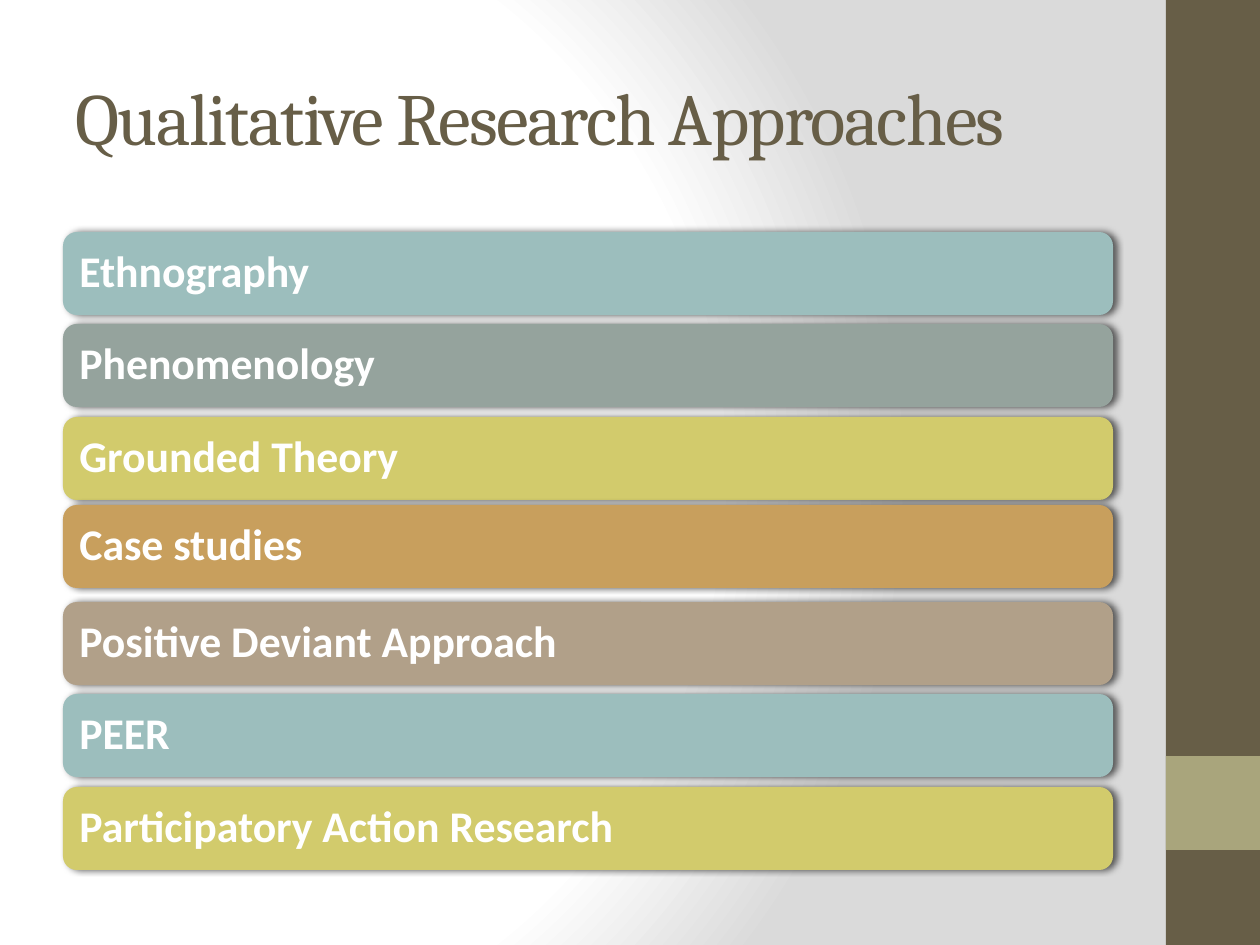
from dataclasses import dataclass

from pptx import Presentation
from pptx.dml.color import RGBColor
from pptx.enum.shapes import MSO_SHAPE
from pptx.enum.text import MSO_ANCHOR, PP_ALIGN
from pptx.oxml import parse_xml
from pptx.oxml.ns import nsdecls, qn
from pptx.util import Inches, Pt

RECTANGLE = MSO_SHAPE.RECTANGLE
ROUNDED = MSO_SHAPE.ROUNDED_RECTANGLE
MIDDLE = MSO_ANCHOR.MIDDLE
LEFT = PP_ALIGN.LEFT

PX_PER_INCH = 126
WHITE = RGBColor(0xFF, 0xFF, 0xFF)
GREY = RGBColor(0xDA, 0xDA, 0xDA)
BROWN = RGBColor(0x67, 0x5E, 0x47)
OLIVE = RGBColor(0xA9, 0xA5, 0x7C)
TEAL = RGBColor(0x9C, 0xBE, 0xBD)
SAGE = RGBColor(0x95, 0xA3, 0x9D)
LIME = RGBColor(0xD2, 0xCB, 0x6C)
OCHRE = RGBColor(0xC8, 0x9F, 0x5D)
TAUPE = RGBColor(0xB1, 0xA0, 0x89)

BAR_LEFT, BAR_TOP, BAR_WIDTH, BAR_HEIGHT = 63, 232, 1050, 83
TWO_BAR_PITCH = 185


@dataclass(frozen=True)
class Approach:
    name: str
    color: RGBColor
    nudge: int = 0


APPROACHES = [
    Approach("Ethnography", TEAL),
    Approach("Phenomenology", SAGE),
    Approach("Grounded Theory", LIME),
    Approach("Case studies", OCHRE, nudge=-4),
    Approach("Positive Deviant Approach", TAUPE),
    Approach("PEER", TEAL),
    Approach("Participatory Action Research", LIME),
]


def px(length: int) -> int:
    return Inches(length / PX_PER_INCH)


def set_background(page) -> None:
    page.background.fill.solid()
    properties = page.element.find(".//" + qn("p:bgPr"))
    stops = "".join(
        f'<a:gs pos="{position * 1000}"><a:srgbClr val="{color}"/></a:gs>'
        for position, color in ((0, WHITE), (75, WHITE), (100, GREY))
    )
    gradient = parse_xml(
        f'<a:gradFill {nsdecls("a")} rotWithShape="1"><a:gsLst>{stops}</a:gsLst>'
        '<a:path path="circle"><a:fillToRect l="20000" t="50000" r="100000" b="50000"/>'
        "</a:path></a:gradFill>"
    )
    properties.replace(properties[0], gradient)


def add_block(page, kind, left: int, top: int, width: int, height: int, color: RGBColor):
    block = page.shapes.add_shape(kind, px(left), px(top), px(width), px(height))
    block.shadow.inherit = False
    block.fill.solid()
    block.fill.fore_color.rgb = color
    block.line.fill.background()
    return block


def add_span(para, text: str, font: str, size: int, color: RGBColor):
    span = para.add_run()
    span.text = text
    span.font.name = font
    span.font.size = Pt(size)
    span.font.color.rgb = color
    return span


def add_shadow(block) -> None:
    effects = block.element.spPr.find(qn("a:effectLst"))
    effects.append(parse_xml(
        f'<a:outerShdw {nsdecls("a")} blurRad="{Pt(4)}" dist="{Pt(2)}" dir="0" '
        'rotWithShape="0"><a:srgbClr val="000000"><a:alpha val="60000"/></a:srgbClr>'
        "</a:outerShdw>"
    ))


def add_approach(page, index: int, approach: Approach) -> None:
    top = BAR_TOP + index * TWO_BAR_PITCH // 2 + approach.nudge
    bar = add_block(page, ROUNDED, BAR_LEFT, top, BAR_WIDTH, BAR_HEIGHT, approach.color)
    add_shadow(bar)
    frame = bar.text_frame
    frame.word_wrap = True
    frame.vertical_anchor = MIDDLE
    frame.margin_left = frame.margin_right = Inches(0.1)
    frame.margin_top = frame.margin_bottom = Inches(0.1)
    para = frame.paragraphs[0]
    para.alignment = LEFT
    para.line_spacing = 0.9
    add_span(para, approach.name, "Calibri", 25, WHITE).font.bold = True


def set_title(page, text: str) -> None:
    title = page.shapes.title
    title.left, title.top, title.width, title.height = px(63), px(38), px(1050), px(157)
    title.text_frame.vertical_anchor = MIDDLE
    para = title.text_frame.paragraphs[0]
    para.alignment = LEFT
    span = add_span(para, text, "Cambria", 42, BROWN)
    span.font._element.set("spc", "-100")


def main() -> None:
    deck = Presentation()
    deck.slide_width, deck.slide_height = px(1260), px(945)
    page = deck.slides.add_slide(deck.slide_layouts.get_by_name("Title Only"))
    set_background(page)

    # Side band with its accent square
    add_block(page, RECTANGLE, 1166, 0, 94, 945, BROWN)
    add_block(page, RECTANGLE, 1166, 756, 94, 94, OLIVE)

    # Title and list of approaches
    set_title(page, "Qualitative Research Approaches")
    for index, approach in enumerate(APPROACHES):
        add_approach(page, index, approach)

    deck.save("out.pptx")


if __name__ == "__main__":
    main()
